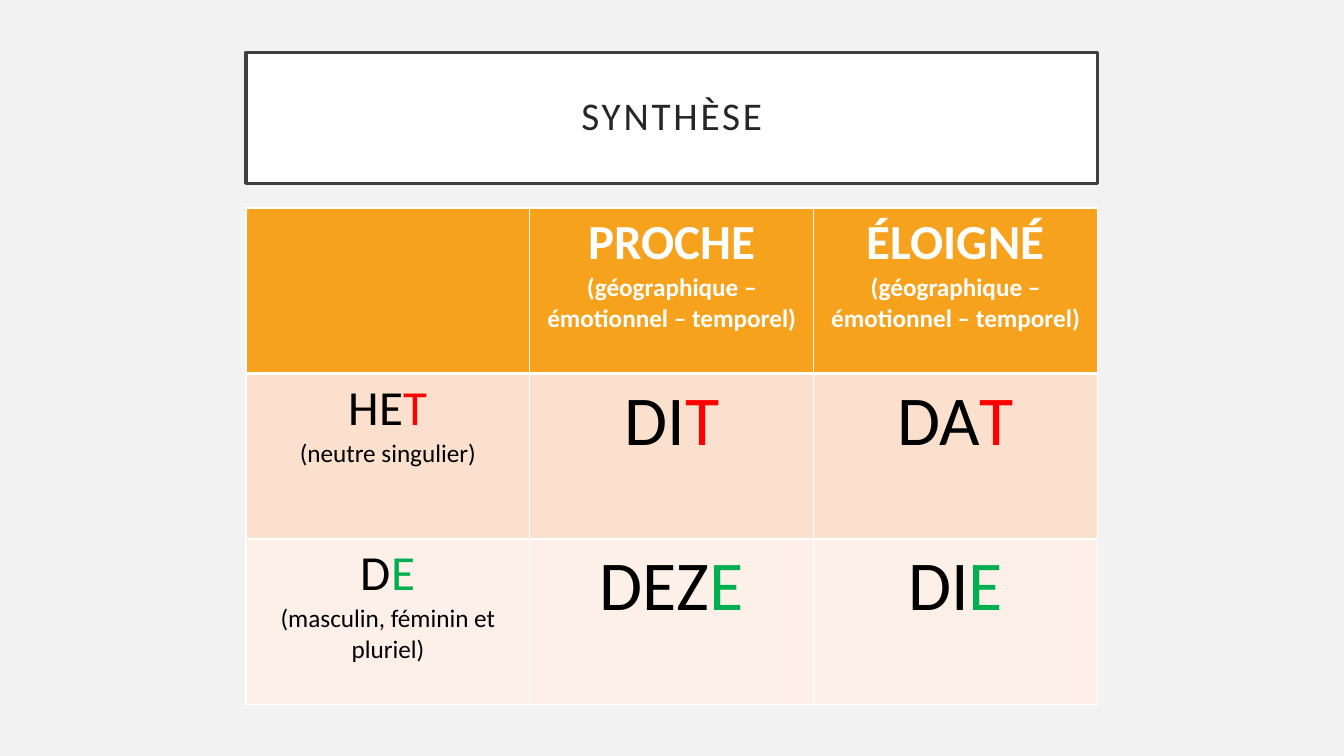
"""Build the slide that sums up the Dutch demonstratives in a table."""
from dataclasses import dataclass

from lxml.etree import SubElement
from pptx import Presentation
from pptx.dml.color import RGBColor as Rgb
from pptx.enum.text import MSO_ANCHOR as Anchor, PP_ALIGN as Align
from pptx.oxml.ns import qn
from pptx.util import Cm, Pt


@dataclass(frozen=True)
class Theme:
    font: str = "Calibri"
    background: str = "F2F2F2"
    white: str = "FFFFFF"
    black: str = "000000"
    frame: str = "404040"
    title: str = "262626"
    header: str = "F6A21D"
    het_row: str = "FBE0CD"
    de_row: str = "FDF0E8"
    het_ending: str = "FF0000"
    de_ending: str = "00B050"
    title_size: int = 28
    heading_size: int = 35
    note_size: int = 18
    answer_size: int = 50


theme = Theme()


def write(paragraph, text, *, size, color, bold=False):
    paragraph.alignment = Align.CENTER
    run = paragraph.add_run()
    run.text = text
    run.font.name = theme.font
    run.font.size = Pt(size)
    run.font.bold = bold
    run.font.color.rgb = Rgb.from_string(color)
    return run


def draw_border(cell, side, width):
    line = SubElement(cell._tc.get_or_add_tcPr(), qn(f"a:ln{side}"), w=str(Pt(width)))
    fill = SubElement(line, qn("a:solidFill"))
    SubElement(fill, qn("a:srgbClr"), val=theme.white)


presentation = Presentation()
presentation.slide_width = Cm(33.87)
presentation.slide_height = Cm(19.05)
slide = presentation.slides.add_slide(presentation.slide_layouts[5])
slide.background.fill.solid()
slide.background.fill.fore_color.rgb = Rgb.from_string(theme.background)

left, width = Cm(6.2), Cm(21.46)

title = slide.shapes.title
title.left, title.top, title.width, title.height = left, Cm(1.32), width, Cm(3.3)
title.fill.solid()
title.fill.fore_color.rgb = Rgb.from_string(theme.white)
title.line.color.rgb = Rgb.from_string(theme.frame)
title.line.width = Pt(2.5)
heading = title.text_frame
heading.vertical_anchor = Anchor.MIDDLE
heading.margin_left = heading.margin_right = Cm(0.51)
heading.margin_top = heading.margin_bottom = Cm(0.51)
heading.paragraphs[0].line_spacing = 0.9
synthesis = write(heading.paragraphs[0], "SYNTHÈSE", size=theme.title_size, color=theme.title)
synthesis.font._element.set("spc", "200")

distance_note = "(géographique – émotionnel – temporel)"
rows = [
    (theme.header, theme.white, theme.white, [
        ("", "", ""), ("PROCHE", "", distance_note), ("ÉLOIGNÉ", "", distance_note)]),
    (theme.het_row, theme.black, theme.het_ending, [
        ("HE", "T", "(neutre singulier)"), ("DI", "T", ""), ("DA", "T", "")]),
    (theme.de_row, theme.black, theme.de_ending, [
        ("D", "E", "(masculin, féminin et pluriel)"), ("DEZ", "E", ""), ("DI", "E", "")]),
]

row_height = Cm(4.17)
demonstratives = slide.shapes.add_table(3, 3, left, Cm(5.24), width, row_height * 3).table

for row, (shade, ink, ending_color, entries) in enumerate(rows):
    is_header = row == 0
    for column, (stem, ending, note) in enumerate(entries):
        cell = demonstratives.cell(row, column)
        cell.margin_left = cell.margin_right = Cm(0.18)
        cell.margin_top = cell.margin_bottom = Cm(0.13)
        for side in "LRTB":
            under_header = (row, side) in ((0, "B"), (1, "T"))
            draw_border(cell, side, 3 if under_header else 1)
        cell.fill.solid()
        cell.fill.fore_color.rgb = Rgb.from_string(shade)

        word = cell.text_frame.paragraphs[0]
        size = theme.heading_size if is_header or column == 0 else theme.answer_size
        if stem:
            write(word, stem, size=size, color=ink, bold=is_header)
        if ending:
            write(word, ending, size=size, color=ending_color)
        if note:
            write(cell.text_frame.add_paragraph(), note,
                  size=theme.note_size, color=ink, bold=is_header)

presentation.save("out.pptx")
